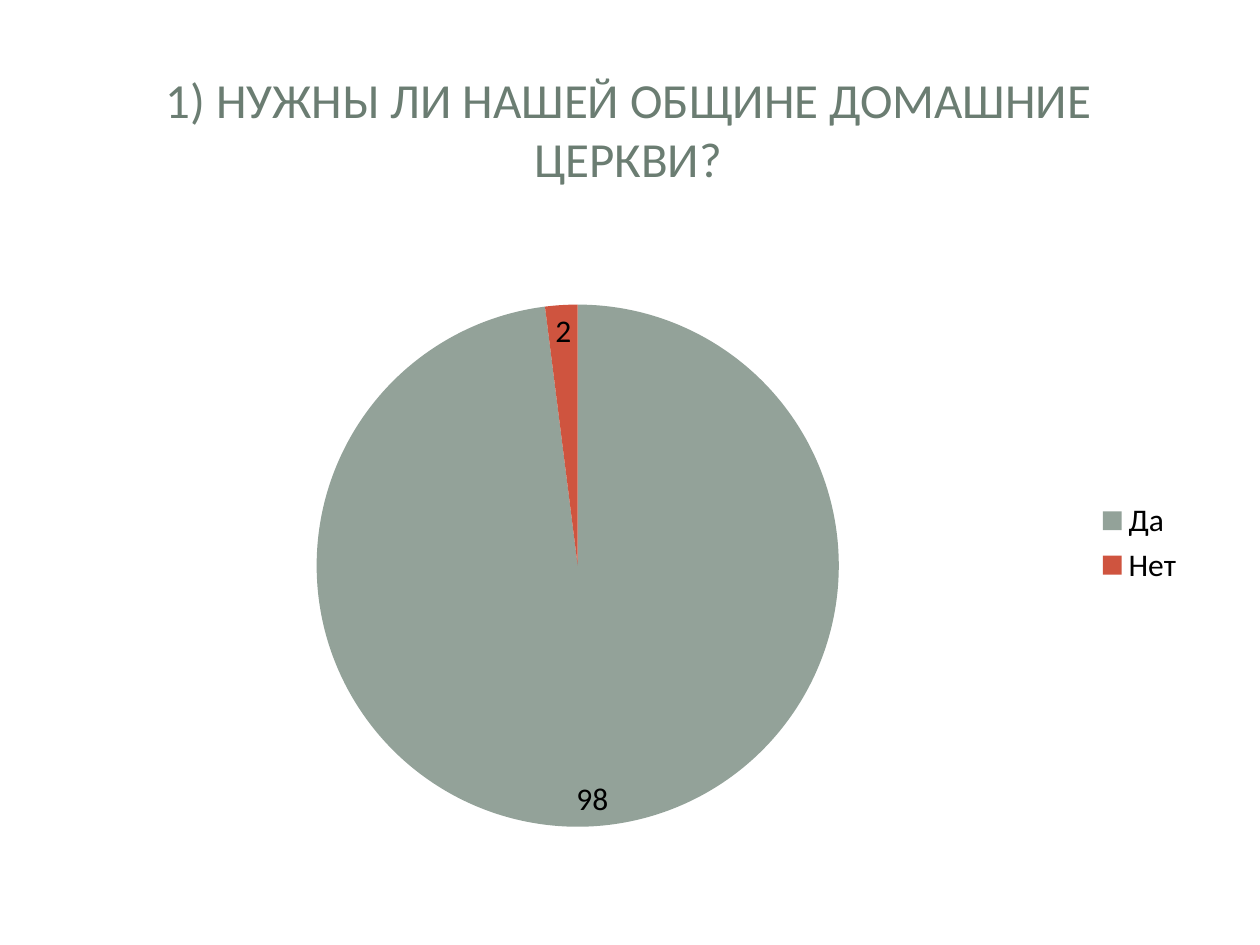
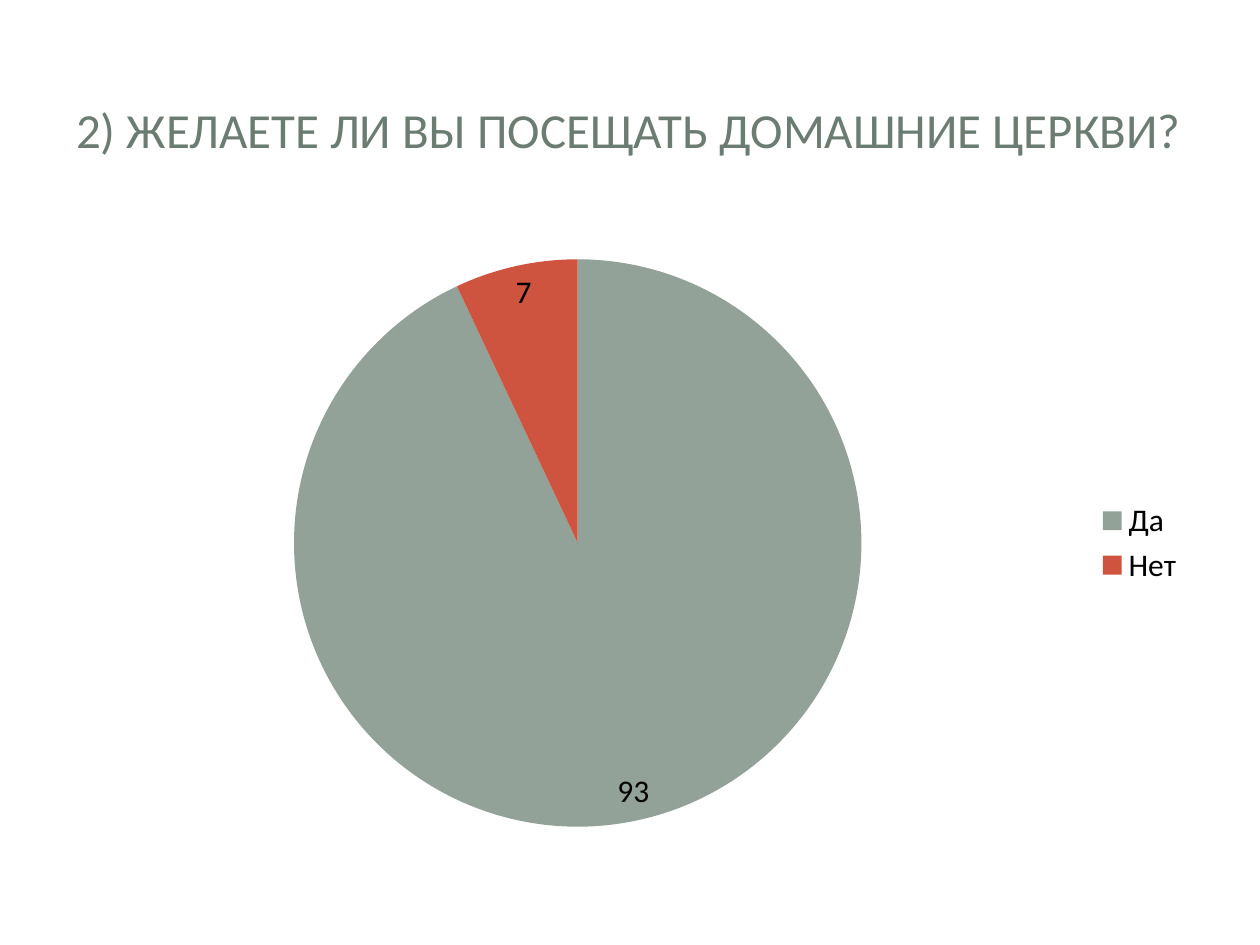
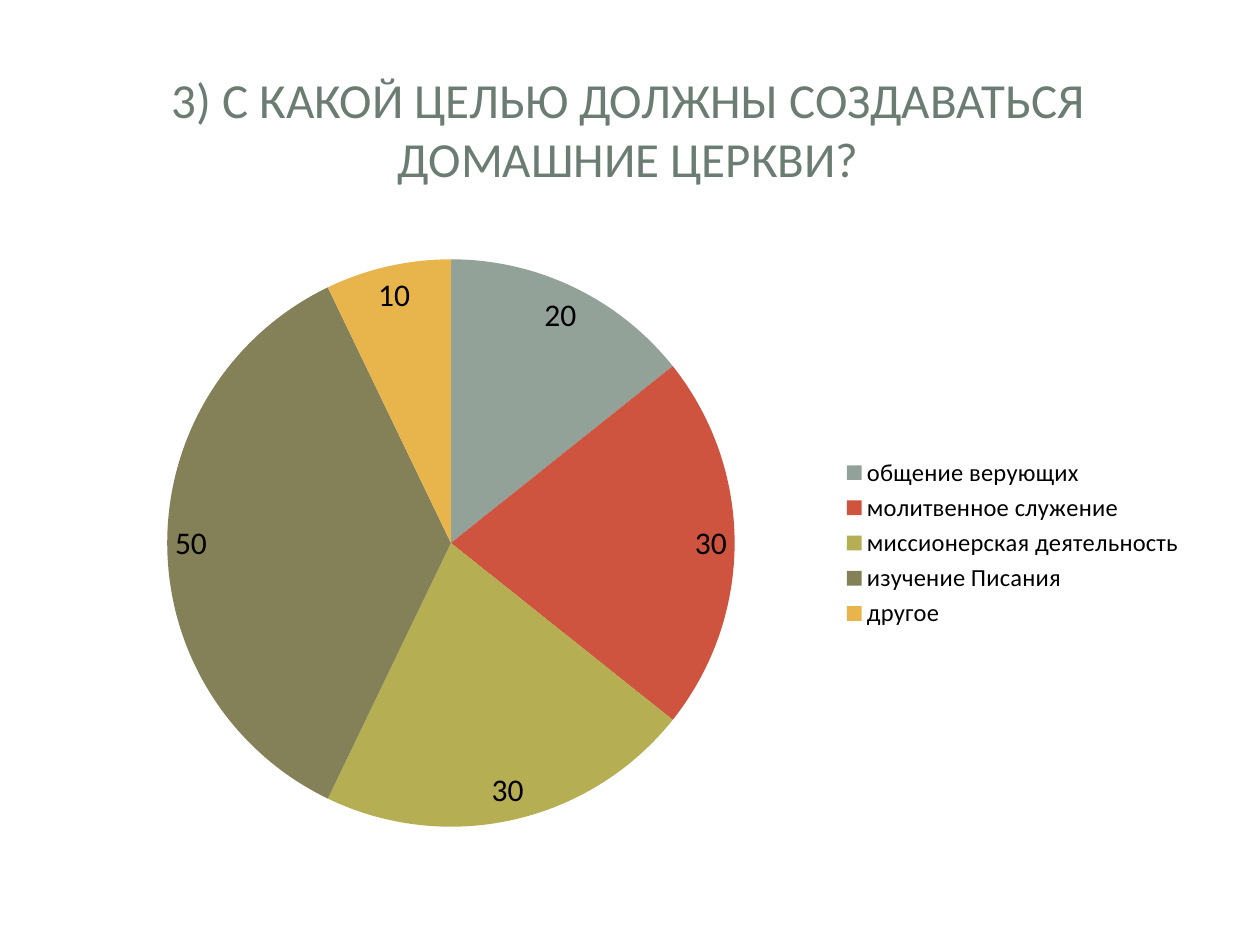
from pptx import Presentation
from pptx.chart.data import CategoryChartData
from pptx.dml.color import RGBColor
from pptx.enum.chart import XL_CHART_TYPE, XL_LABEL_POSITION, XL_LEGEND_POSITION
from pptx.enum.shapes import MSO_SHAPE
from pptx.enum.text import MSO_ANCHOR, PP_ALIGN
from pptx.oxml.ns import qn
from pptx.util import Inches, Pt
from lxml import etree

PIE = XL_CHART_TYPE.PIE
BEST_FIT = XL_LABEL_POSITION.BEST_FIT
RIGHT = XL_LEGEND_POSITION.RIGHT
ROUNDED, RECTANGLE = MSO_SHAPE.ROUNDED_RECTANGLE, MSO_SHAPE.RECTANGLE
MIDDLE, CENTER = MSO_ANCHOR.MIDDLE, PP_ALIGN.CENTER

WHITE, BLACK, TITLE_COLOR = "FFFFFF", "000000", "6B7D72"
SLICE_COLORS = ["93A299", "CF543F", "B5AE53", "848058", "E8B54D"]
TEXT_FONT, CHART_FONT = "Calibri", "Quicksand"

# Each question: title, answers with their values, legend size
QUESTIONS = [
    ("1) НУЖНЫ ЛИ НАШЕЙ ОБЩИНЕ ДОМАШНИЕ ЦЕРКВИ?", {"Да": 98, "Нет": 2}, 18),
    ("2) ЖЕЛАЕТЕ ЛИ ВЫ ПОСЕЩАТЬ ДОМАШНИЕ ЦЕРКВИ?", {"Да": 93, "Нет": 7}, 18),
    ("3) С КАКОЙ ЦЕЛЬЮ ДОЛЖНЫ СОЗДАВАТЬСЯ ДОМАШНИЕ ЦЕРКВИ?",
     {"общение верующих": 20, "молитвенное служение": 30,
      "миссионерская деятельность": 30, "изучение Писания": 50, "другое": 10}, 14),
]

# Panels behind every title: shape, left, top, width, height, opacity in percent
PANELS = [
    (ROUNDED, 0.1, 0.11, 9.8, 7.29, 100),
    (RECTANGLE, 0.3, 0.3, 9.4, 1.45, 83),
    (RECTANGLE, 0.41, 0.41, 9.17, 1.22, 100),
]


def paint(color_format, color):
    color_format.rgb = RGBColor.from_string(color)


def style_font(font, name, size, color):
    font.name, font.size, font.bold = name, Pt(size), False
    paint(font.color, color)


prs = Presentation()
prs.slide_width, prs.slide_height = Inches(10), Inches(7.5)
layout = prs.slide_layouts[5]

# Shared title place
layout_title = layout.placeholders[0]
layout_title.left, layout_title.top = Inches(0.47), Inches(0.45)
layout_title.width, layout_title.height = Inches(9.03), Inches(1.14)

slides = [prs.slides.add_slide(layout) for _ in QUESTIONS]

# Shared panels, drawn once and moved to the back of the layout
for depth, (outline, left, top, width, height, opacity) in enumerate(PANELS):
    panel = slides[0].shapes.add_shape(
        outline, Inches(left), Inches(top), Inches(width), Inches(height))
    panel.shadow.inherit = False
    panel.fill.solid()
    paint(panel.fill.fore_color, WHITE)
    panel.line.fill.background()
    if outline == ROUNDED:
        panel.adjustments[0] = 0.017
    if opacity < 100:
        white = panel.element.spPr.find(".//" + qn("a:srgbClr"))
        etree.SubElement(white, qn("a:alpha"), val=str(opacity * 1000))
    layout.shapes.element.insert(2 + depth, panel.element)

for slide, (question, answers, legend_size) in zip(slides, QUESTIONS):
    # Question
    heading = slide.shapes.title.text_frame
    heading.vertical_anchor = MIDDLE
    heading.word_wrap = True
    heading.paragraphs[0].alignment = CENTER
    run = heading.paragraphs[0].add_run()
    run.text = question
    style_font(run.font, TEXT_FONT, 28, TITLE_COLOR)

    # Answers
    votes = CategoryChartData()
    votes.categories = list(answers)
    votes.add_series("Series 1", list(answers.values()))
    pie = slide.shapes.add_chart(
        PIE, Inches(0.5), Inches(1.92), Inches(9), Inches(4.78), votes).chart
    style_font(pie.font, CHART_FONT, 18, BLACK)
    pie.has_title = False
    pie.has_legend = True
    pie.legend.position = RIGHT
    pie.legend.include_in_layout = False
    style_font(pie.legend.font, TEXT_FONT, legend_size, BLACK)

    plot = pie.plots[0]
    plot.vary_by_categories = True
    for index, color in enumerate(SLICE_COLORS[:len(answers)]):
        answer = plot.series[0].points[index].format
        answer.fill.solid()
        paint(answer.fill.fore_color, color)
        answer.line.fill.background()

    labels = plot.series[0].data_labels
    labels.show_value = True
    labels.position = BEST_FIT
    style_font(labels.font, TEXT_FONT, 18, BLACK)

prs.save("out.pptx")
